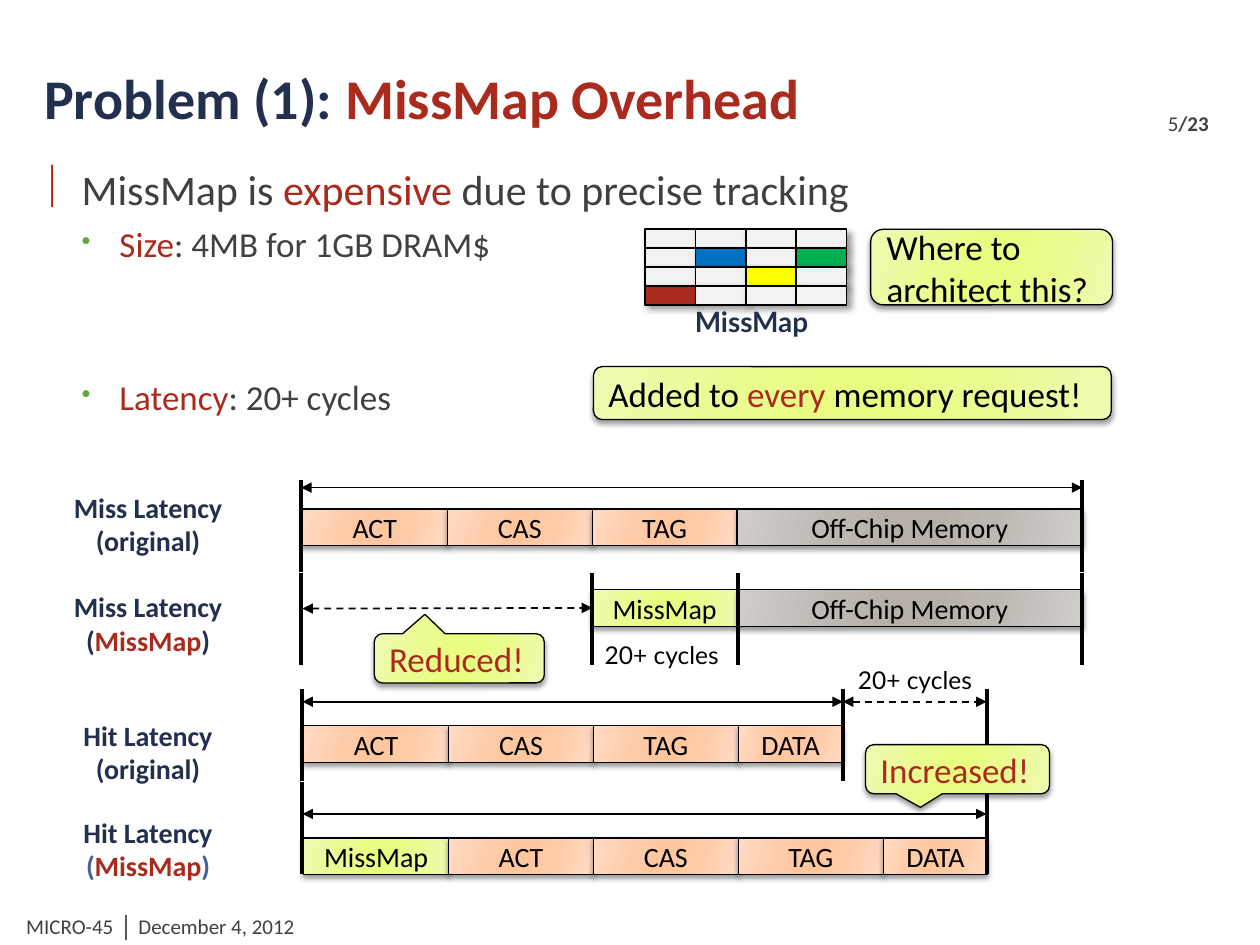
from lxml.etree import SubElement
from pptx import Presentation
from pptx.dml.color import RGBColor
from pptx.enum.dml import MSO_LINE
from pptx.enum.shapes import MSO_CONNECTOR, MSO_SHAPE as SHAPE
from pptx.enum.text import MSO_ANCHOR as ANCHOR, PP_ALIGN as ALIGN
from pptx.oxml.ns import qn
from pptx.util import Inches, Pt

# ---- Content ----
NAVY, RED, GRAY, BLACK = "232F4E", "AA2B1E", "404040", "000000"
GREEN, BLUE = "64A73B", "465E9C"
STOPS = (0, 30, 45, 55, 73, 100)
PEACH = ("FFDBC4", "FFCCA9", "FFC7A0")
STONE = ("D1CDC9", "BDB7B1", "B6B0A8")
LIME = ("EFFBB3", "EAFC8F", "E9FD81")

TITLE = [("Problem (1): ", NAVY), ("MissMap Overhead", RED)]
# runs, size, left indent, space before, bullet, bullet colour, bullet percent
POINTS = [
    ([("MissMap is ", GRAY), ("expensive ", RED), ("due to precise tracking", GRAY)],
     24, 0.3, 0, "|", RED, 100),
    ([("Size", RED), (": 4MB for 1GB DRAM$", GRAY)], 20, 0.6, 5, "•", GREEN, 76),
    ([("Latency", RED), (": 20+ cycles", GRAY)], 20, 0.6, 63.5, "•", GREEN, 76),
]
MAP_COLOURS = {(1, 1): "0070C0", (1, 3): "00B050", (2, 2): "FFFF00", (3, 0): RED}

SLOT, DATA_W, MEMORY_W, BAR_H, MARK_H = 1.15, 0.83, 2.74, 0.29, 0.73
ACT, CAS, TAG = [(name, SLOT, PEACH) for name in ("ACT", "CAS", "TAG")]
DATA = ("DATA", DATA_W, PEACH)
MEMORY = ("Off-Chip Memory", MEMORY_W, STONE)
MISSMAP = ("MissMap", SLOT, LIME)
# label runs, label top, bar left, bar top, bars, mark top, mark positions
TIMELINES = [
    ([("Miss Latency\n(original)", NAVY)], 3.89,
     2.4, 4.04, [ACT, CAS, TAG, MEMORY], 3.81, (2.39, 8.59)),
    ([("Miss Latency\n(", NAVY), ("MissMap", RED), (")", NAVY)], 4.68,
     2.4 + 2 * SLOT, 4.68, [MISSMAP, MEMORY], 4.55, (2.39, 4.7, 5.86, 8.59)),
    ([("Hit Latency\n(original)", NAVY)], 5.7,
     2.41, 5.76, [ACT, CAS, TAG, DATA], 5.47, (2.4, 6.69, 7.83)),
    ([("Hit Latency\n", NAVY), ("(", BLUE), ("MissMap", RED), (")", BLUE)], 6.47,
     2.41, 6.65, [MISSMAP, ACT, CAS, TAG, DATA], 6.21, (2.4, 7.83)),
]
# from x, to x, y, dashed
SPANS = [(2.39, 8.59, 3.87, False), (2.4, 6.69, 5.57, False),
         (6.69, 7.83, 5.57, True), (2.4, 7.83, 6.46, False)]
# runs, place, shape, adjustments
CALLOUTS = [
    ([("Where to architect this?", BLACK)], (6.91, 1.82, 1.92, 0.6),
     SHAPE.ROUNDED_RECTANGLE, ()),
    ([("Added to ", BLACK), ("every", RED), (" memory request!", BLACK)],
     (4.71, 2.91, 4.11, 0.42), SHAPE.ROUNDED_RECTANGLE, ()),
    ([("Reduced!", RED)], (2.97, 5.03, 1.35, 0.39),
     SHAPE.ROUNDED_RECTANGULAR_CALLOUT, (-0.202, -0.896, 0.167)),
    ([("Increased!", RED)], (6.87, 5.91, 1.46, 0.39),
     SHAPE.ROUNDED_RECTANGULAR_CALLOUT, (-0.202, 0.776, 0.167)),
]

deck = Presentation()
deck.slide_width, deck.slide_height = Inches(10), Inches(7.5)
slide = deck.slides.add_slide(deck.slide_layouts[5])
shapes = slide.shapes


# ---- Helpers ----
def rgb(colour):
    return RGBColor.from_string(colour)


def place(*lengths):
    return [Inches(length) for length in lengths]


def write(para, runs, size=16, bold=False, align=ALIGN.LEFT, font="Calibri"):
    """Runs are (text, colour) or (text, colour, bold)."""
    para.alignment = align
    for words, colour, *own_bold in runs:
        for number, line in enumerate(words.split("\n")):
            if number:
                para.add_line_break()
            if line:
                run = para.add_run()
                run.text = line
                run.font.name, run.font.size = font, Pt(size)
                run.font.bold = own_bold[0] if own_bold else bold
                run.font.color.rgb = rgb(colour)


def text_box(at, runs, inset=True, **look):
    frame = shapes.add_textbox(*place(*at)).text_frame
    frame.word_wrap = True
    if not inset:
        frame.margin_left = frame.margin_right = 0
        frame.margin_top = frame.margin_bottom = 0
    write(frame.paragraphs[0], runs, **look)


def block(at, fill, kind=SHAPE.RECTANGLE, line=0.75, shadow=(3, 2, 90)):
    """A solid fill is a hex string, a gradient a tuple of three."""
    made = shapes.add_shape(kind, *place(*at))
    if isinstance(fill, str):
        made.fill.solid()
        made.fill.fore_color.rgb = rgb(fill)
    else:
        made.fill.gradient()
        made.fill.gradient_angle = 344
        stop_list = next(made._element.spPr.iter(qn("a:gsLst")))
        for old in list(stop_list):
            stop_list.remove(old)
        for stop, colour in zip(STOPS, fill + fill[::-1]):
            gs = SubElement(stop_list, qn("a:gs"), pos=str(stop * 1000))
            SubElement(gs, qn("a:srgbClr"), val=colour)
    made.line.color.rgb, made.line.width = rgb(BLACK), Pt(line)
    made.shadow.inherit = False
    blur, distance, angle = shadow
    outer = SubElement(made._element.spPr.find(qn("a:effectLst")), qn("a:outerShdw"),
                       blurRad=str(Pt(blur)), dist=str(Pt(distance)),
                       dir=str(angle * 60000), rotWithShape="0")
    shade = SubElement(outer, qn("a:srgbClr"), val=BLACK)
    SubElement(shade, qn("a:alpha"), val="40000")
    made.text_frame.word_wrap = True
    made.text_frame.vertical_anchor = ANCHOR.MIDDLE
    return made


def rule(x1, y1, x2, y2, width=1, colour=BLACK, arrows=False, dashed=False):
    made = shapes.add_connector(MSO_CONNECTOR.STRAIGHT, *place(x1, y1, x2, y2))
    made.line.color.rgb, made.line.width = rgb(colour), Pt(width)
    if dashed:
        made.line.dash_style = MSO_LINE.DASH
    if arrows:
        for end in ("a:headEnd", "a:tailEnd"):
            SubElement(made.line._get_or_add_ln(), qn(end), type="triangle")
    SubElement(made._element.spPr, qn("a:effectLst"))
    return made


# ---- Title, page number and footer ----
title = shapes.title
title.left, title.top, title.width, title.height = place(0.25, 0.17, 9.25, 0.92)
title.text_frame.vertical_anchor = ANCHOR.BOTTOM
write(title.text_frame.paragraphs[0], TITLE, size=32, bold=True)
text_box((9.17, 0.83, 0.67, 0.25), [("5", GRAY), ("/23", GRAY, True)], size=12)
text_box((0.11, 7.2, 0.92, 0.25), [("MICRO-45", GRAY)], size=12)
text_box((1, 7.2, 3.18, 0.25), [("December 4, 2012", GRAY)], size=12)
rule(1, 7.26, 1, 7.46, colour="595959")

# ---- Bullet points ----
body = shapes.add_textbox(*place(0.25, 1.25, 9.5, 2.3)).text_frame
body.word_wrap = True
for number, (runs, size, indent, before, mark, colour, percent) in enumerate(POINTS):
    para = body.add_paragraph() if number else body.paragraphs[0]
    props = para._p.get_or_add_pPr()
    props.set("marL", str(Inches(indent)))
    props.set("indent", str(Inches(-0.3)))
    SubElement(SubElement(props, qn("a:buClr")), qn("a:srgbClr"), val=colour)
    SubElement(props, qn("a:buSzPct"), val=str(percent * 1000))
    SubElement(props, qn("a:buChar"), char=mark)
    if before:
        para.space_before = Pt(before)
    write(para, runs, size=size)

# ---- MissMap grid ----
for row in range(4):
    for column in range(4):
        block((5.12 + 0.4 * column, 1.82 + 0.15 * row, 0.4, 0.15),
              MAP_COLOURS.get((row, column), "F2F2F2"), line=1, shadow=(4, 3, 45))
text_box((5.17, 2.42, 1.59, 0.29), [("MissMap", NAVY)], inset=False,
         bold=True, align=ALIGN.CENTER, font="Lato")

# ---- Latency timelines ----
first_bars = []
for label, label_top, left, top, bars, mark_top, marks in TIMELINES:
    text_box((0.38, label_top, 1.59, 0.29), label, inset=False,
             bold=True, align=ALIGN.CENTER)
    for number, (name, width, fill) in enumerate(bars):
        bar = block((left, top, width, BAR_H), fill)
        write(bar.text_frame.paragraphs[0], [(name, BLACK)], align=ALIGN.CENTER)
        left += width
        if number == 0:
            first_bars.append(bar)
    for x in marks:
        rule(x, mark_top, x, mark_top + MARK_H, width=2.25)
for start, end, y, dashed in SPANS:
    rule(start, y, end, y, arrows=True, dashed=dashed)
saved = rule(2.4, 4.83, 4.7, 4.83, arrows=True, dashed=True)
saved.end_connect(first_bars[1], 1)
for x, y in ((4.7, 5.03), (6.71, 5.23)):
    text_box((x, y, SLOT, 0.34), [("20+ cycles", BLACK)], size=14, font="Lato")

# ---- Callouts ----
for runs, at, kind, adjustments in CALLOUTS:
    callout = block(at, LIME, kind)
    for number, value in enumerate(adjustments):
        callout.adjustments[number] = value
    write(callout.text_frame.paragraphs[0], runs, size=20)

deck.save("out.pptx")
